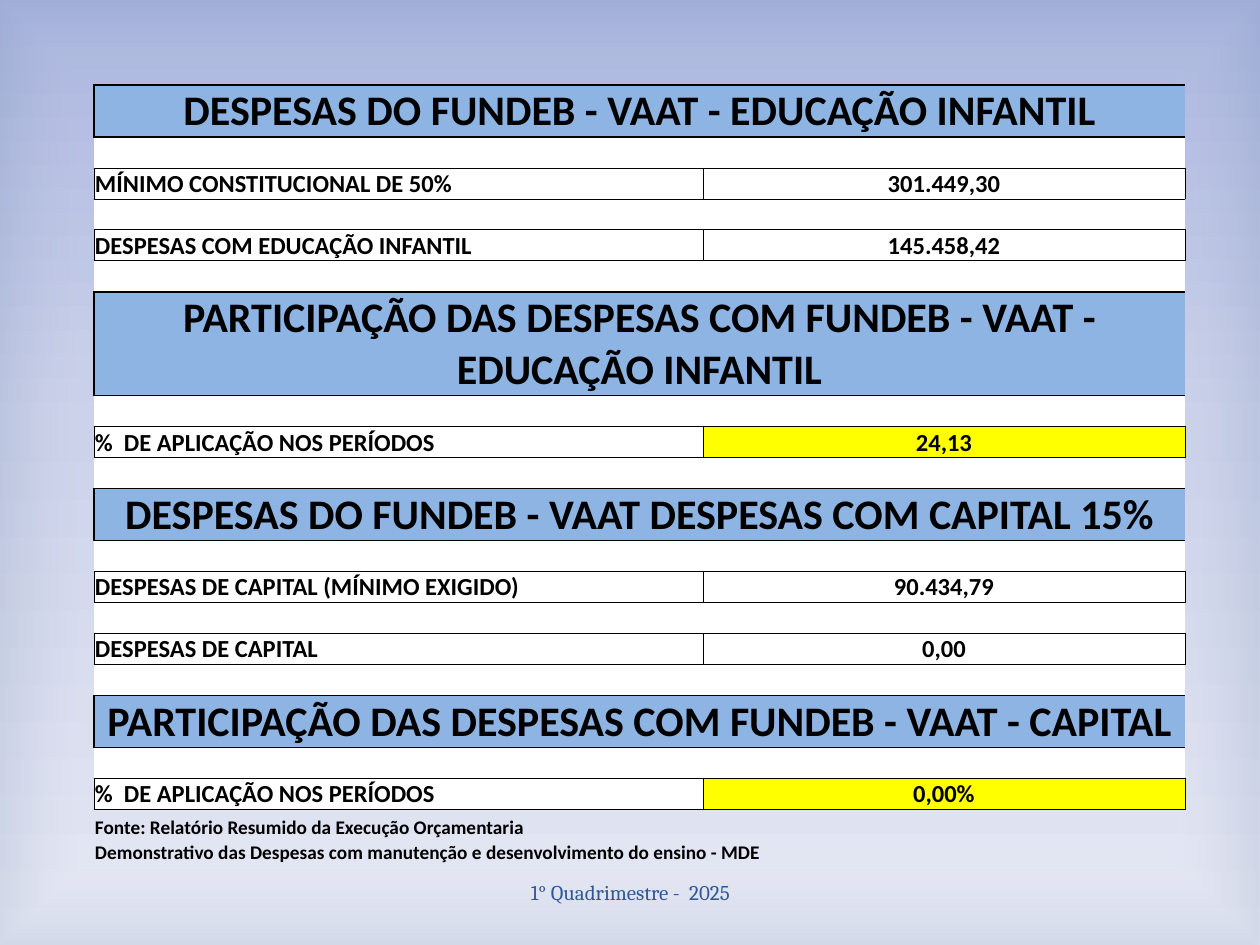
from lxml import etree
from pptx import Presentation
from pptx.dml.color import RGBColor
from pptx.enum.shapes import MSO_SHAPE as Shape
from pptx.enum.text import MSO_ANCHOR as Anchor, PP_ALIGN as Align
from pptx.oxml import parse_xml
from pptx.oxml.ns import qn
from pptx.util import Pt

PX = 7257.6
BLACK = RGBColor(0, 0, 0)
WHITE = RGBColor(255, 255, 255)
BLUE = RGBColor(0x8D, 0xB4, 0xE2)
GOLD = RGBColor(255, 255, 0)
NAVY = RGBColor(0x2F, 0x58, 0x97)
NS = "http://schemas.openxmlformats.org/drawingml/2006/main"


def grad(old, stops, way):
    marks = "".join(
        f'<a:gs pos="{pos * 1000}"><a:srgbClr val="{tone}">'
        f'<a:alpha val="{alpha * 1000}"/></a:srgbClr></a:gs>'
        for pos, tone, alpha in stops)
    new = parse_xml(f'<a:gradFill xmlns:a="{NS}" rotWithShape="1">'
                    f'<a:gsLst>{marks}</a:gsLst>{way}</a:gradFill>')
    old.getparent().replace(old, new)


def edge(cell, sides):
    props = cell._tc.get_or_add_tcPr()
    for side in "LRTB":
        line = etree.SubElement(props, qn("a:ln" + side))
        if side in sides:
            line.set("w", str(Pt(sides[side])))
            fill = etree.SubElement(line, qn("a:solidFill"))
            etree.SubElement(fill, qn("a:srgbClr")).set("val", str(BLACK))
        else:
            line.set("w", "0")
            etree.SubElement(line, qn("a:noFill"))


deck = Presentation()
deck.slide_width, deck.slide_height = int(1260 * PX), int(945 * PX)
slide = deck.slides.add_slide(deck.slide_layouts[6])

back = slide.background.fill
back.gradient()
grad(slide._element.find(".//" + qn("a:gradFill")),
     [(0, "A2AEDC", 100), (45, "C6CDE8", 100), (100, "E3E6F3", 100)],
     '<a:lin ang="5400000" scaled="0"/>')

glow = slide.shapes.add_shape(Shape.RECTANGLE, 0, 0, deck.slide_width, deck.slide_height)
glow.shadow.inherit = False
glow.line.fill.background()
glow.fill.gradient()
grad(glow._element.spPr.find(qn("a:gradFill")),
     [(83, "FFFFFF", 11), (100, "9BADC4", 23)],
     '<a:path path="rect"><a:fillToRect l="50000" t="50000" r="50000" b="50000"/></a:path>')

foot = slide.shapes.add_textbox(*[int(n * PX) for n in (431, 867, 399, 50)])
frame = foot.text_frame
frame.word_wrap = True
frame.vertical_anchor = Anchor.MIDDLE
para = frame.paragraphs[0]
para.text = "1° Quadrimestre -  2025"
para.alignment = Align.CENTER
para.font.size, para.font.name = Pt(12), "Cambria"
para.font.color.rgb = NAVY

GAP = ("gap", "", "")
rows = [
    ("head", "DESPESAS DO FUNDEB - VAAT - EDUCAÇÃO INFANTIL", ""), GAP,
    ("low", "MÍNIMO CONSTITUCIONAL DE 50%", "301.449,30"), GAP,
    ("data", "DESPESAS COM EDUCAÇÃO INFANTIL", "145.458,42"), GAP,
    ("tall", "PARTICIPAÇÃO DAS DESPESAS COM FUNDEB - VAAT - EDUCAÇÃO INFANTIL", ""),
    ("join", "", ""),
    ("rate", "%  DE APLICAÇÃO NOS PERÍODOS", "24,13"), GAP,
    ("head", "DESPESAS DO FUNDEB - VAAT DESPESAS COM CAPITAL 15%", ""), GAP,
    ("data", "DESPESAS DE CAPITAL (MÍNIMO EXIGIDO)", "90.434,79"), GAP,
    ("data", "DESPESAS DE CAPITAL", "0,00"), GAP,
    ("head", "PARTICIPAÇÃO DAS DESPESAS COM FUNDEB - VAAT - CAPITAL", ""),
    ("join", "", ""),
    ("rate", "%  DE APLICAÇÃO NOS PERÍODOS", "0,00%"),
    ("note", "Fonte: Relatório Resumido da Execução Orçamentaria", ""),
    ("last", "Demonstrativo das Despesas com manutenção e desenvolvimento do ensino - MDE", ""),
]
tall = {"head": 52, "tall": 104, "last": 25}
sizes = {"head": 24, "tall": 24, "note": 11, "last": 11}
high = [tall.get(kind, 31) for kind, *_ in rows]
wide = [609, 482]

box = [int(n * PX) for n in (94, 85, sum(wide), sum(high))]
table = slide.shapes.add_table(len(rows), 2, *box).table
table.first_row = table.horz_banding = False
for col, width in zip(table.columns, wide):
    col.width = int(width * PX)

for r, (kind, *words) in enumerate(rows):
    table.rows[r].height = int(high[r] * PX)
    title = kind in ("head", "tall")
    for c, text in enumerate(words):
        cell = table.cell(r, c)
        cell.margin_left = cell.margin_right = cell.margin_top = int(PX)
        cell.margin_bottom = 0
        cell.vertical_anchor = Anchor.BOTTOM if kind in ("low", "note", "last") else Anchor.MIDDLE
        if title:
            sides = {"T": 1, "B": 1} if c else {"L": 1, "T": 1, "B": 1}
        elif kind in ("gap", "join"):
            above = rows[r - 1][0] in ("head", "tall")
            below = rows[r + 1][0] in ("head", "tall")
            sides = {"T": 1 if above else 0.5, "B": 1 if below else 0.5}
        elif kind == "note":
            sides = {"T": 0.5}
        elif kind == "last":
            sides = {}
        else:
            sides = dict.fromkeys("LRTB", 0.5)
        edge(cell, sides)
        if kind in ("note", "last"):
            cell.fill.background()
        else:
            cell.fill.solid()
            cell.fill.fore_color.rgb = BLUE if title else GOLD if kind == "rate" and c else WHITE
        para = cell.text_frame.paragraphs[0]
        para.text = text
        para.alignment = Align.CENTER if title or c else Align.LEFT
        font = para.font
        font.name, font.bold = "Calibri", True
        font.size = Pt(sizes.get(kind, 14))
        font.color.rgb = BLACK
        if not text:
            para._p.get_or_add_endParaRPr().set("sz", str(sizes.get(kind, 14) * 100))
    if title or kind in ("join", "last"):
        table.cell(r, 0).merge(table.cell(r, 1))

deck.save("out.pptx")
